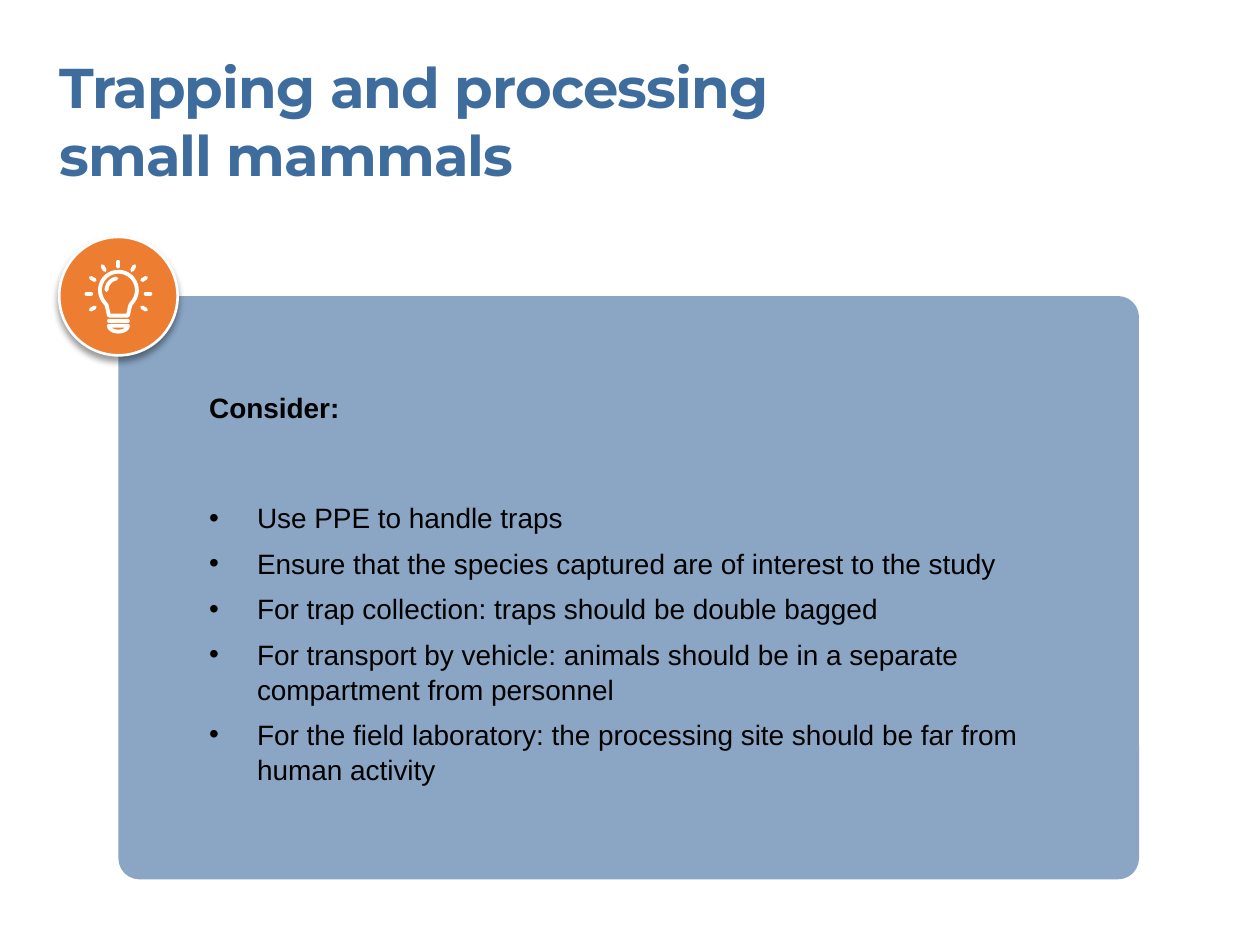
from math import cos, radians, sin

from lxml import etree
from pptx import Presentation
from pptx import util as u
from pptx.dml.color import RGBColor
from pptx.enum import shapes, text
from pptx.oxml.ns import qn

HEX = {"blue": "3D6C9D", "orange": "ED7D31", "white": "FFFFFF", "black": "000000"}
HINTS = [
    "Use PPE to handle traps",
    "Ensure that the species captured are of interest to the study",
    "For trap collection: traps should be double bagged",
    "For transport by vehicle: animals should be in a separate compartment from personnel",
    "For the field laboratory: the processing site should be far from human activity",
]


def rgb(name):
    return RGBColor.from_string(HEX[name])


def sub(node, tag, **attrs):
    return etree.SubElement(node, qn(tag), attrs)


def write(par, words, size=16, font="Arial", color="black", bold=False,
          track=0, after=0, lead=1.0, hang=None):
    """Fill a paragraph; hang is the bullet indent, None leaves it unbulleted."""
    par.alignment = text.PP_ALIGN.LEFT
    par.space_before, par.space_after = u.Pt(0), u.Pt(after)
    par.line_spacing = lead
    props = par._p.get_or_add_pPr()
    inset = u.Inches(hang or 0)
    props.set("marL", str(inset))
    props.set("indent", str(-inset))
    if hang is None:
        sub(props, "a:buNone")
    run = par.add_run()
    run.text = words
    run.font.size, run.font.name, run.font.bold = u.Pt(size), font, bold
    run.font.color.rgb = rgb(color)
    if track:
        run.font._element.set("spc", str(int(track * 100)))


def arc(mid, rx, ry, start, end, steps=24):
    """Points on an ellipse; angles in degrees, counted anticlockwise from the right."""
    turns = [radians(start + (end - start) * i / steps) for i in range(steps + 1)]
    return [(rx * cos(t), mid - ry * sin(t)) for t in turns]


class Deck:
    """Slide with lengths in percent of its width and height."""

    def __init__(self):
        self.prs = Presentation()
        self.prs.slide_width, self.prs.slide_height = u.Inches(10), u.Inches(7.5)
        self.slide = self.prs.slides.add_slide(self.prs.slide_layouts[1])
        self.pen = 2.2

    def box(self, left, top, wide, high):
        w, h = self.prs.slide_width, self.prs.slide_height
        return [round(v * s / 100) for v, s in zip((left, top, wide, high), (w, h, w, h))]

    def holder(self, index, place, anchor):
        """Move a placeholder to its place, on top of what is drawn so far."""
        item = self.slide.placeholders[index]
        item.left, item.top, item.width, item.height = self.box(*place)
        item.element.getparent().append(item.element)
        frame = item.text_frame
        frame.margin_left = frame.margin_right = frame.margin_top = frame.margin_bottom = 0
        frame.word_wrap, frame.auto_size = True, text.MSO_AUTO_SIZE.NONE
        frame.vertical_anchor = anchor
        return frame

    def shape(self, kind, place, color, alpha=None, edge=None):
        item = self.slide.shapes.add_shape(kind, *self.box(*place))
        item.shadow.inherit = False
        item.fill.solid()
        item.fill.fore_color.rgb = rgb(color)
        if alpha:
            tint = item.element.spPr.find(".//" + qn("a:srgbClr"))
            sub(tint, "a:alpha", val=str(alpha * 1000))
        if edge:
            item.line.color.rgb, item.line.width = rgb(edge), u.Pt(1.5)
        else:
            item.line.fill.background()
        return item

    def shade(self, item, blur, drop, alpha):
        effects = item.element.spPr.find(qn("a:effectLst"))
        outer = sub(effects, "a:outerShdw", blurRad=str(u.Pt(blur)),
                    dist=str(u.Pt(drop)), dir="5400000", rotWithShape="0")
        tint = sub(outer, "a:srgbClr", val=HEX["black"])
        sub(tint, "a:alpha", val=str(alpha * 1000))

    def ink(self, item):
        """Give a stroke its white, round-ended pen."""
        item.line.color.rgb, item.line.width = rgb("white"), u.Pt(self.pen)
        line = item.element.spPr.find(qn("a:ln"))
        line.set("cap", "rnd")
        sub(line, "a:round")

    def stroke(self, badge, points, closed=False):
        """Draw through points given in badge widths from the badge's centre."""
        mid_x, mid_y = badge.left + badge.width / 2, badge.top + badge.height / 2
        spots = [(round(mid_x + x * badge.width), round(mid_y + y * badge.height))
                 for x, y in points]
        if len(spots) == 2:
            item = self.slide.shapes.add_connector(
                shapes.MSO_CONNECTOR.STRAIGHT, *spots[0], *spots[1])
            self.ink(item)
            sub(item.element.spPr, "a:effectLst")
            return
        path = self.slide.shapes.build_freeform(*spots[0], scale=1.0)
        path.add_line_segments(spots[1:], close=closed)
        item = path.convert_to_shape()
        item.shadow.inherit = False
        item.fill.background()
        self.ink(item)

    def bulb(self, badge):
        neck = [(0.1, 0.075), (0.08, 0.165), (-0.08, 0.165), (-0.1, 0.075)]
        self.stroke(badge, arc(-0.05, 0.156, 0.156, 215, -35) + neck, True)
        self.stroke(badge, arc(-0.05, 0.1, 0.1, 180, 100))
        self.stroke(badge, [(-0.08, 0.207), (0.08, 0.207)])
        self.stroke(badge, arc(0.25, 0.08, 0.05, 180, 360), True)
        for angle in range(-30, 211, 30):
            ends = [arc(-0.02, r, r, angle, angle, 1)[0] for r in (0.23, 0.27)]
            self.stroke(badge, ends)


def main():
    deck = Deck()
    head = deck.holder(0, (4.7, 5.6, 68.8, 14.4), text.MSO_ANCHOR.TOP)
    write(head.paragraphs[0], "Trapping and processing small mammals", size=32,
          font="Montserrat", color="blue", bold=True, track=-0.5)

    kinds = shapes.MSO_SHAPE
    card = deck.shape(kinds.ROUNDED_RECTANGLE, (9.4, 31.33, 81, 61.73), "blue", alpha=60)
    card.adjustments[0] = 0.036
    badge = deck.shape(kinds.OVAL, (4.7, 25.07, 9.4, 12.53), "orange", edge="white")
    deck.shade(badge, blur=4, drop=3, alpha=40)

    body = deck.holder(1, (16.6, 31.33, 66.6, 61.73), text.MSO_ANCHOR.MIDDLE)
    write(body.paragraphs[0], "Consider:", bold=True, after=43, lead=1.04)
    for hint in HINTS:
        write(body.add_paragraph(), hint, after=6, lead=1.04, hang=0.38)

    deck.bulb(badge)
    deck.prs.save("out.pptx")


if __name__ == "__main__":
    main()
